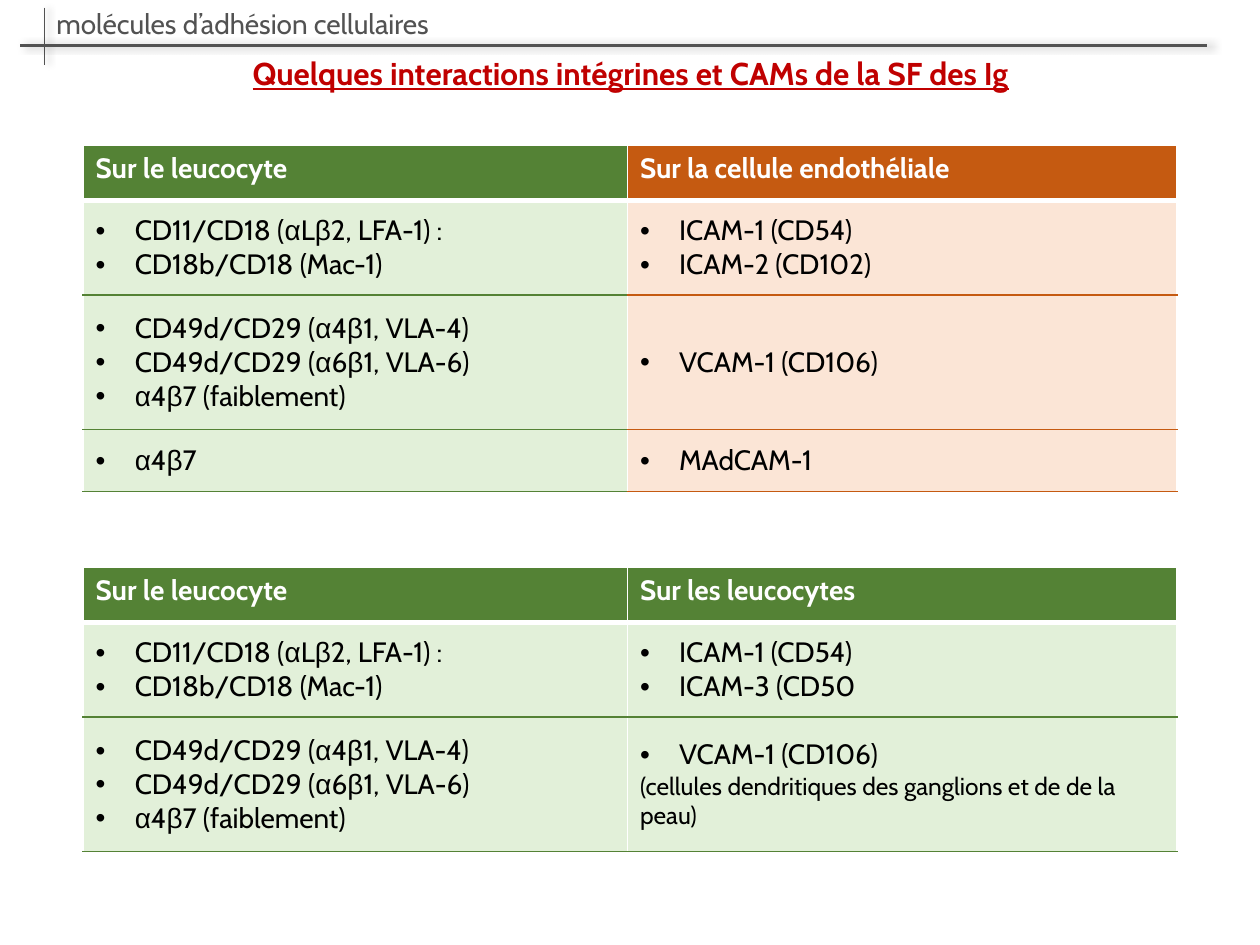
"""Build the slide on integrin and CAM interactions."""
from itertools import groupby
from lxml import etree
from pptx import Presentation
from pptx import util as u
from pptx.dml.color import RGBColor
from pptx.enum import shapes, text
from pptx.oxml import parse_xml
from pptx.oxml.ns import nsdecls, qn

TOPIC = "molécules d’adhésion cellulaires"
TITLE = "Quelques interactions intégrines et CAMs de la SF des Ig"
NOTE = "(cellules dendritiques des ganglions et de de la peau)"
LFA = ["CD11/CD18 (αLβ2, LFA-1) :", "CD18b/CD18 (Mac-1)"]
VLA = ["CD49d/CD29 (α4β1, VLA-4)", "CD49d/CD29 (α6β1, VLA-6)", "α4β7 (faiblement)"]
GREEN, ORANGE = ("548235", "E2F0D9"), ("C55A11", "FBE5D6")
WHITE, BLACK, GREY, RED = "FFFFFF", "000000", "525252", "C00000"
FONT = "Cabin"
COLS, ROWS = (4.32, 4.36), (0.44, 0.75, 1.07, 0.49)
TABLES = [
    (1.15, (GREEN, ORANGE), ("Sur le leucocyte", "Sur la cellule endothéliale"), [
        (LFA, ["ICAM-1 (CD54)", "ICAM-2 (CD102)"]),
        (VLA, ["VCAM-1 (CD106)"]),
        (["α4β7"], ["MAdCAM-1"]),
    ]),
    (4.5, (GREEN, GREEN), ("Sur le leucocyte", "Sur les leucocytes"), [
        (LFA, ["ICAM-1 (CD54)", "ICAM-3 (CD50"]),
        (VLA, ["VCAM-1 (CD106)", NOTE]),
    ]),
]
LINES = [((0.35, 0.06), (0.35, 0.52), 0.5), ((0.16, 0.36), (9.58, 0.36), 0)]


def hue(code):
    return RGBColor.from_string(code)


def write(para, words, size, color, bold=False, under=False):
    for greek, part in groupby(words, lambda sign: sign in "αβ"):
        run = para.add_run()
        run.text = "".join(part)
        font = run.font
        font.name = "Arial" if greek else FONT
        font.size, font.bold, font.underline = u.Pt(size), bold, under
        font.color.rgb = hue(color)


def bullet(para):
    props = para._p.get_or_add_pPr()
    props.set("marL", str(u.Inches(0.31)))
    props.set("indent", str(u.Inches(-0.31)))
    etree.SubElement(props, qn("a:buFont")).set("typeface", "Arial")
    etree.SubElement(props, qn("a:buChar")).set("char", "•")


def border(cell, top, base):
    props = cell._tc.get_or_add_tcPr()
    sides = {"L": (WHITE, 1), "R": (WHITE, 1), "T": top, "B": base}
    for spot, (side, (color, width)) in enumerate(sides.items()):
        props.insert(spot, parse_xml(
            f'<a:ln{side} {nsdecls("a")} w="{u.Pt(width)}"><a:solidFill>'
            f'<a:srgbClr val="{color}"/></a:solidFill></a:ln{side}>'))


def paint(cell, color):
    cell.fill.solid()
    cell.fill.fore_color.rgb = hue(color)


def draw_table(slide, top, tones, heads, body):
    highs = ROWS[:len(body) + 1]
    grid = slide.shapes.add_table(
        len(highs), len(COLS), u.Inches(0.66), u.Inches(top),
        u.Inches(sum(COLS)), u.Inches(sum(highs))).table
    for col, width in zip(grid.columns, COLS):
        col.width = u.Inches(width)
    for row, high in zip(grid.rows, highs):
        row.height = u.Inches(high)
    for c, (dark, pale) in enumerate(tones):
        head = grid.cell(0, c)
        paint(head, dark)
        border(head, (WHITE, 1), (WHITE, 3))
        write(head.text_frame.paragraphs[0], heads[c], 16, WHITE, True)
        for r, items in enumerate(body, 1):
            cell = grid.cell(r, c)
            paint(cell, pale)
            border(cell, (WHITE if r == 1 else dark, 1), (dark, 1))
            cell.vertical_anchor = text.MSO_ANCHOR.MIDDLE
            frame = cell.text_frame
            for n, item in enumerate(items[c]):
                para = frame.add_paragraph() if n else frame.paragraphs[0]
                if item != NOTE:
                    bullet(para)
                write(para, item, 14 if item == NOTE else 16, BLACK)


def draw_line(slide, start, end, width):
    line = slide.shapes.add_connector(
        shapes.MSO_CONNECTOR.STRAIGHT, *map(u.Inches, start + end))
    line.line.color.rgb = hue(GREY)
    line.line.width = u.Pt(width)
    line._element.spPr.append(parse_xml(
        f'<a:effectLst {nsdecls("a")}><a:outerShdw blurRad="{u.Pt(4)}" '
        f'dist="{u.Pt(3)}" dir="0"><a:srgbClr val="{BLACK}">'
        '<a:alpha val="40000"/></a:srgbClr></a:outerShdw></a:effectLst>'))


def main():
    deck = Presentation()
    deck.slide_width, deck.slide_height = u.Inches(10), u.Inches(7.5)
    slide = deck.slides.add_slide(deck.slide_layouts[5])

    topic = slide.shapes.add_textbox(*map(u.Inches, (0.35, 0, 6.2, 0.37)))
    topic.text_frame.word_wrap = True
    write(topic.text_frame.paragraphs[0], TOPIC, 16, GREY)
    for line in LINES:
        draw_line(slide, *line)

    title = slide.shapes.title
    title.left, title.top, title.width, title.height = map(
        u.Inches, (0.79, 0.38, 8.43, 0.4))
    frame = title.text_frame
    frame.auto_size = text.MSO_AUTO_SIZE.NONE
    frame.vertical_anchor = text.MSO_ANCHOR.TOP
    frame.paragraphs[0].alignment = text.PP_ALIGN.CENTER
    write(frame.paragraphs[0], TITLE, 18, RED, True, True)

    for table in TABLES:
        draw_table(slide, *table)
    deck.save("out.pptx")


if __name__ == "__main__":
    main()
